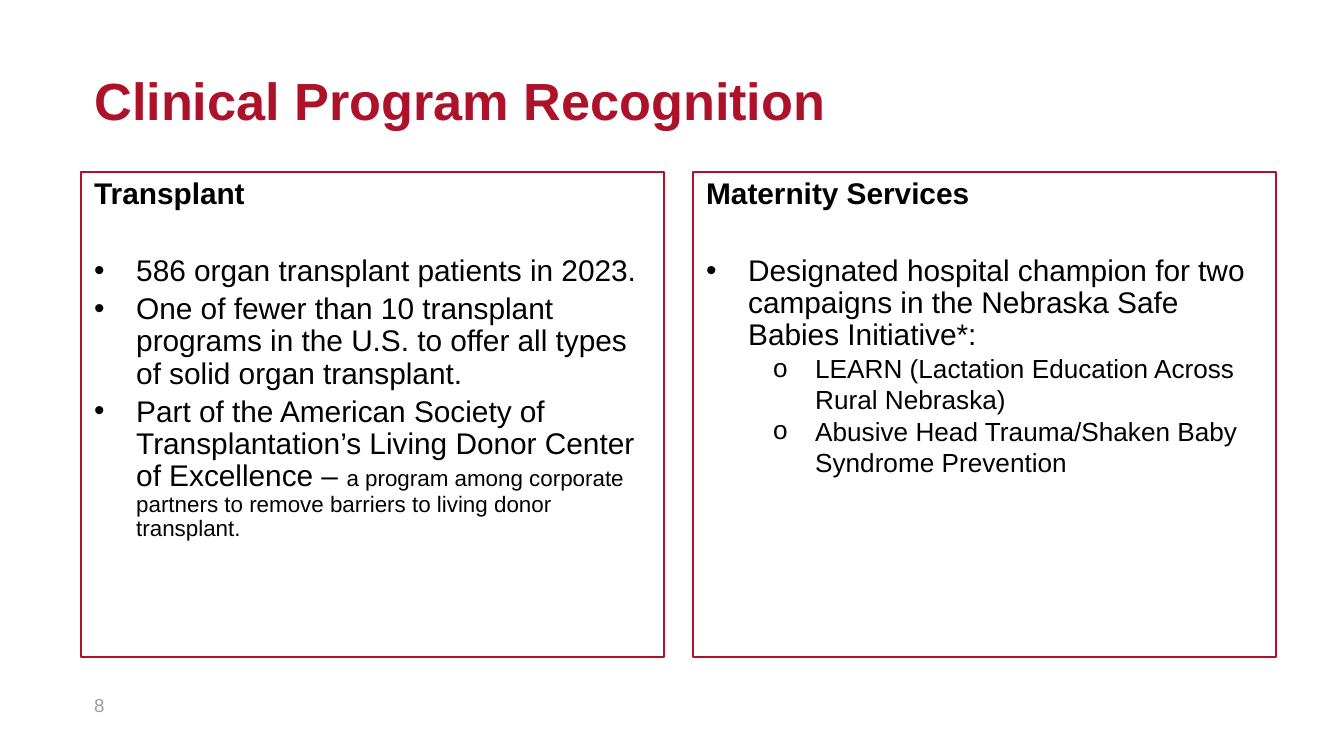
from dataclasses import dataclass

from lxml import etree
from pptx import Presentation
from pptx.dml.color import RGBColor
from pptx.enum.shapes import MSO_SHAPE
from pptx.enum.text import MSO_ANCHOR, MSO_AUTO_SIZE, PP_ALIGN
from pptx.oxml.ns import qn
from pptx.slide import Slide
from pptx.util import Emu, Pt

RECTANGLE = MSO_SHAPE.RECTANGLE
TOP = MSO_ANCHOR.TOP
NO_AUTOFIT = MSO_AUTO_SIZE.NONE
LEFT = PP_ALIGN.LEFT

CRIMSON = RGBColor(0xAD, 0x12, 0x2A)
BLACK = RGBColor(0x00, 0x00, 0x00)
GRAY = RGBColor(0x98, 0x9E, 0xA3)
FONT = "Arial"

EMU_PER_PX = 914400 / 134.4
MARGIN_X = 81
PANEL_TOP, PANEL_WIDTH, PANEL_HEIGHT = 172, 583, 485
PANEL_PITCH = 612
HANGING = 42


@dataclass(frozen=True)
class BulletStyle:
    symbol: str
    level: int
    indent: int
    size: int
    line_spacing: float
    space_before: float


MAIN = BulletStyle("•", 0, 42, 16, 0.9, 3.2)
SUB = BulletStyle("o", 1, 109, 14, 1.0, 0)
HEADING_GAP = 24


@dataclass(frozen=True)
class Item:
    text: str
    style: BulletStyle = MAIN
    detail: str = ""


@dataclass(frozen=True)
class Panel:
    heading: str
    items: tuple[Item, ...]


PANELS = (
    Panel("Transplant", (
        Item("586 organ transplant patients in 2023."),
        Item("One of fewer than 10 transplant programs in the U.S. to offer "
             "all types of solid organ transplant."),
        Item("Part of the American Society of Transplantation’s Living Donor "
             "Center of Excellence – ",
             detail="a program among corporate partners to remove barriers "
                    "to living donor transplant."),
    )),
    Panel("Maternity Services", (
        Item("Designated hospital champion for two campaigns in the Nebraska "
             "Safe Babies Initiative*:"),
        Item("LEARN (Lactation Education Across Rural Nebraska)", SUB),
        Item("Abusive Head Trauma/Shaken Baby Syndrome Prevention", SUB),
    )),
)


def px(length: int) -> Emu:
    return Emu(round(length * EMU_PER_PX))


def format_run(run, size: int, color: RGBColor, bold: bool = False) -> None:
    run.font.name = FONT
    run.font.size = Pt(size)
    run.font.bold = bold
    run.font.color.rgb = color


def add_bullet(paragraph, style: BulletStyle) -> None:
    properties = paragraph._p.get_or_add_pPr()
    properties.set("marL", str(px(style.indent)))
    properties.set("indent", str(-px(HANGING)))
    etree.SubElement(properties, qn("a:buFont")).set("typeface", FONT)
    etree.SubElement(properties, qn("a:buChar")).set("char", style.symbol)


def add_title(slide: Slide, text: str) -> None:
    title = slide.shapes.title
    title.left, title.top = px(MARGIN_X), px(75)
    title.width, title.height = px(1195), px(77)
    frame = title.text_frame
    frame.text = text
    frame.auto_size = NO_AUTOFIT
    frame.vertical_anchor = TOP
    frame.margin_top = frame.margin_bottom = 0
    heading = frame.paragraphs[0]
    heading.alignment = LEFT
    heading.line_spacing = 0.9
    format_run(heading.runs[0], 28, CRIMSON, bold=True)


def add_panel(slide: Slide, panel: Panel, left: int) -> None:
    box = slide.shapes.add_shape(RECTANGLE, px(left), px(PANEL_TOP),
                                 px(PANEL_WIDTH), px(PANEL_HEIGHT))
    box.shadow.inherit = False
    box.fill.background()
    box.line.color.rgb = CRIMSON
    box.line.width = Pt(0.75)
    frame = box.text_frame
    frame.word_wrap = True
    frame.vertical_anchor = TOP
    frame.text = panel.heading
    heading = frame.paragraphs[0]
    heading.alignment = LEFT
    heading.line_spacing = 0.9
    format_run(heading.runs[0], 16, BLACK, bold=True)

    for index, item in enumerate(panel.items):
        style = item.style
        paragraph = frame.add_paragraph()
        paragraph.text = item.text
        add_bullet(paragraph, style)
        paragraph.level = style.level
        paragraph.alignment = LEFT
        paragraph.line_spacing = style.line_spacing
        paragraph.space_before = Pt(style.space_before if index else HEADING_GAP)
        format_run(paragraph.runs[0], style.size, BLACK)
        if item.detail:
            detail = paragraph.add_run()
            detail.text = item.detail
            format_run(detail, 12, BLACK)


def add_page_number(slide: Slide, number: str) -> None:
    box = slide.shapes.add_textbox(px(MARGIN_X), px(687), px(74), px(32))
    box.text_frame.word_wrap = True
    box.text_frame.text = number
    format_run(box.text_frame.paragraphs[0].runs[0], 10, GRAY)


def main() -> None:
    presentation = Presentation()
    presentation.slide_width = px(1344)
    presentation.slide_height = px(756)
    slide = presentation.slides.add_slide(presentation.slide_layouts[5])
    add_title(slide, "Clinical Program Recognition")
    for column, panel in enumerate(PANELS):
        add_panel(slide, panel, MARGIN_X + column * PANEL_PITCH)
    add_page_number(slide, "8")
    presentation.save("out.pptx")


if __name__ == "__main__":
    main()
